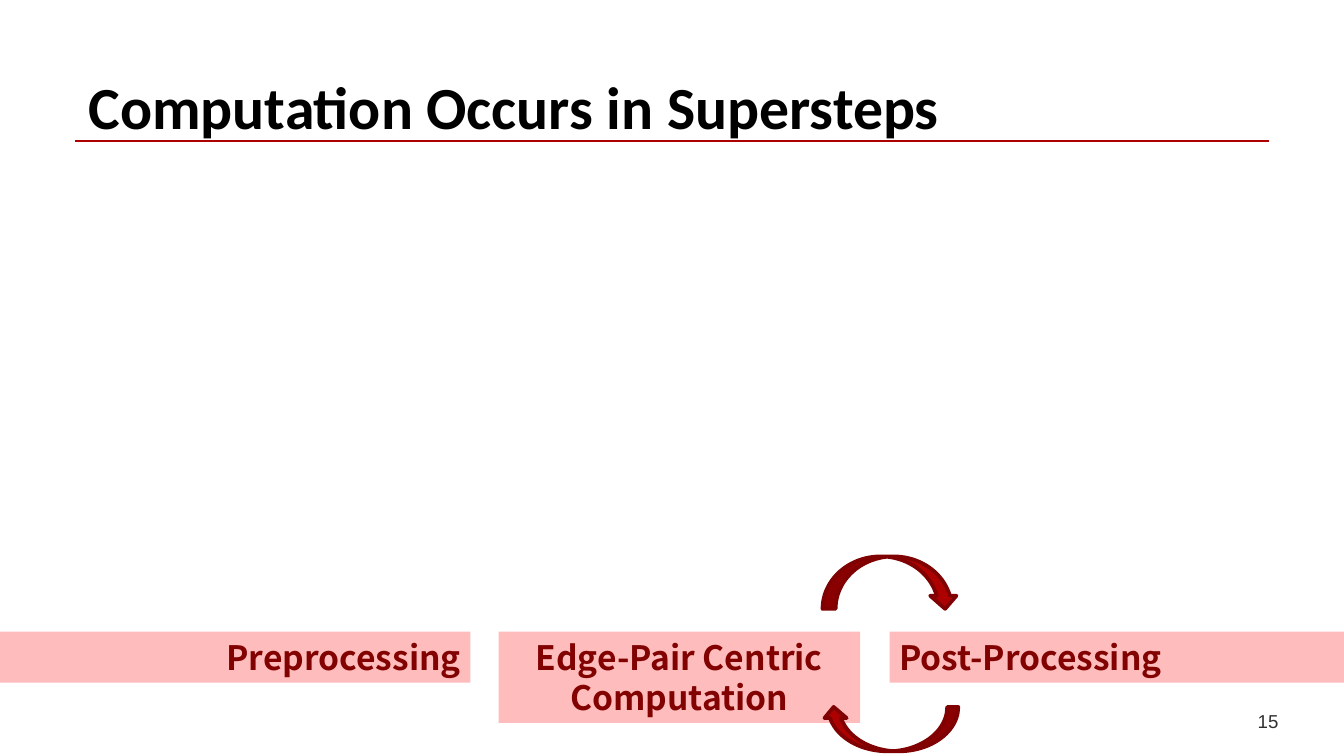
from dataclasses import dataclass

from pptx import Presentation
from pptx.dml.color import RGBColor
from pptx.enum.shapes import MSO_CONNECTOR, MSO_SHAPE
from pptx.enum.text import MSO_ANCHOR, PP_ALIGN
from pptx.oxml.ns import qn
from pptx.util import Inches, Pt
from lxml import etree

LEFT, MID, RIGHT = PP_ALIGN.LEFT, PP_ALIGN.CENTER, PP_ALIGN.RIGHT
LOW, CENTER = MSO_ANCHOR.BOTTOM, MSO_ANCHOR.MIDDLE
RECT, CURVE = MSO_SHAPE.RECTANGLE, MSO_SHAPE.CURVED_DOWN_ARROW
LINE = MSO_CONNECTOR.STRAIGHT
WIDE = 10
TALL = WIDE * 9 / 16


@dataclass(frozen=True)
class Theme:
    red: str = "AD0101"
    dark: str = "820101"
    edge: str = "800101"
    pink: str = "FFBCBC"
    black: str = "000000"
    gray: str = "303030"
    head: str = "Calibri"
    body: str = "Noto Sans CJK TC"
    plain: str = "Arial"
    large: int = 32
    step: int = 18
    small: int = 10


THEME = Theme()


def color(code):
    return RGBColor.from_string(code)


def apply(part, form):
    for name, value in form.items():
        setattr(part, name, value)


def write(shape, lines, font, tint, frame, para):
    text = shape.text_frame
    apply(text, {"word_wrap": True, **frame})
    text.text = "\n".join(lines)
    for item in text.paragraphs:
        apply(item, para)
        for run in item.runs:
            apply(run.font, font)
            run.font.color.rgb = color(tint)


def add_shape(slide, kind, box, fill):
    shape = slide.shapes.add_shape(kind, *map(Inches, box))
    shape.shadow.inherit = False
    shape.fill.solid()
    shape.fill.fore_color.rgb = color(fill)
    return shape


def add_title(slide, box, title):
    x, y, w, h = box
    rule = y + h - 0.05
    line = slide.shapes.add_connector(
        LINE, *map(Inches, (x, rule, x + w, rule)))
    line.line.color.rgb = color(THEME.red)
    line.line.width = Pt(1)
    props = line._element.find(qn("p:spPr"))
    etree.SubElement(props, qn("a:effectLst"))
    shape = slide.shapes.add_textbox(*map(Inches, box))
    font = {"name": THEME.head, "size": Pt(THEME.large), "bold": True}
    write(shape, [title], font, THEME.black,
          {"vertical_anchor": LOW}, {"line_spacing": Pt(35)})


def add_number(slide, box, number):
    shape = slide.shapes.add_textbox(*map(Inches, box))
    font = {"name": THEME.plain, "size": Pt(THEME.small)}
    write(shape, [number], font, THEME.gray,
          {"vertical_anchor": LOW}, {"alignment": MID})


def add_step(slide, box, lines, align):
    shape = add_shape(slide, RECT, box, THEME.pink)
    shape.line.fill.background()
    side, edge = Inches(0.07), Inches(0.04)
    frame = {"margin_left": side, "margin_right": side,
             "margin_top": edge, "margin_bottom": edge,
             "vertical_anchor": CENTER}
    font = {"name": THEME.body, "size": Pt(THEME.step), "bold": True}
    write(shape, lines, font, THEME.dark, frame,
          {"alignment": align, "line_spacing": Pt(21.5)})


def add_loop(slide, box):
    x, y, w, h = box
    low = 0.33
    for top, tall, turn in ((y, 0.39, 0), (y + h - low, low, 180)):
        arrow = add_shape(slide, CURVE, (x, top, w, tall), THEME.red)
        arrow.rotation = turn
        arrow.line.color.rgb = color(THEME.edge)
        arrow.line.width = Pt(2)


def add_flow(slide, box, steps):
    x, y, w, h = box
    line, pad = 0.3, 0.08
    spans = ((0, 3.5), (3.71, 2.69), (6.62, w - 6.62))
    for (lines, align), (left, width) in zip(steps, spans):
        tall = line * len(lines) + pad
        top = y if tall == h else y + 0.13
        add_step(slide, (x + left, top, width, tall), lines, align)
    add_loop(slide, (x + 6.12, y - 0.43, 1.01, 1.45))


def main():
    deck = Presentation()
    apply(deck, {"slide_width": Inches(WIDE), "slide_height": Inches(TALL)})
    slide = deck.slides.add_slide(deck.slide_layouts[6])
    add_title(slide, (0.56, 0.2, 8.88, 0.9),
              "Computation Occurs in Supersteps")
    add_number(slide, (8.97, 5.2, 0.93, 0.3), "15")
    steps = ((["Preprocessing"], RIGHT),
             (["Edge-Pair Centric", "Computation"], MID),
             (["Post-Processing"], LEFT))
    add_flow(slide, (0, 4.57, WIDE, 0.68), steps)
    deck.save("out.pptx")


if __name__ == "__main__":
    main()
